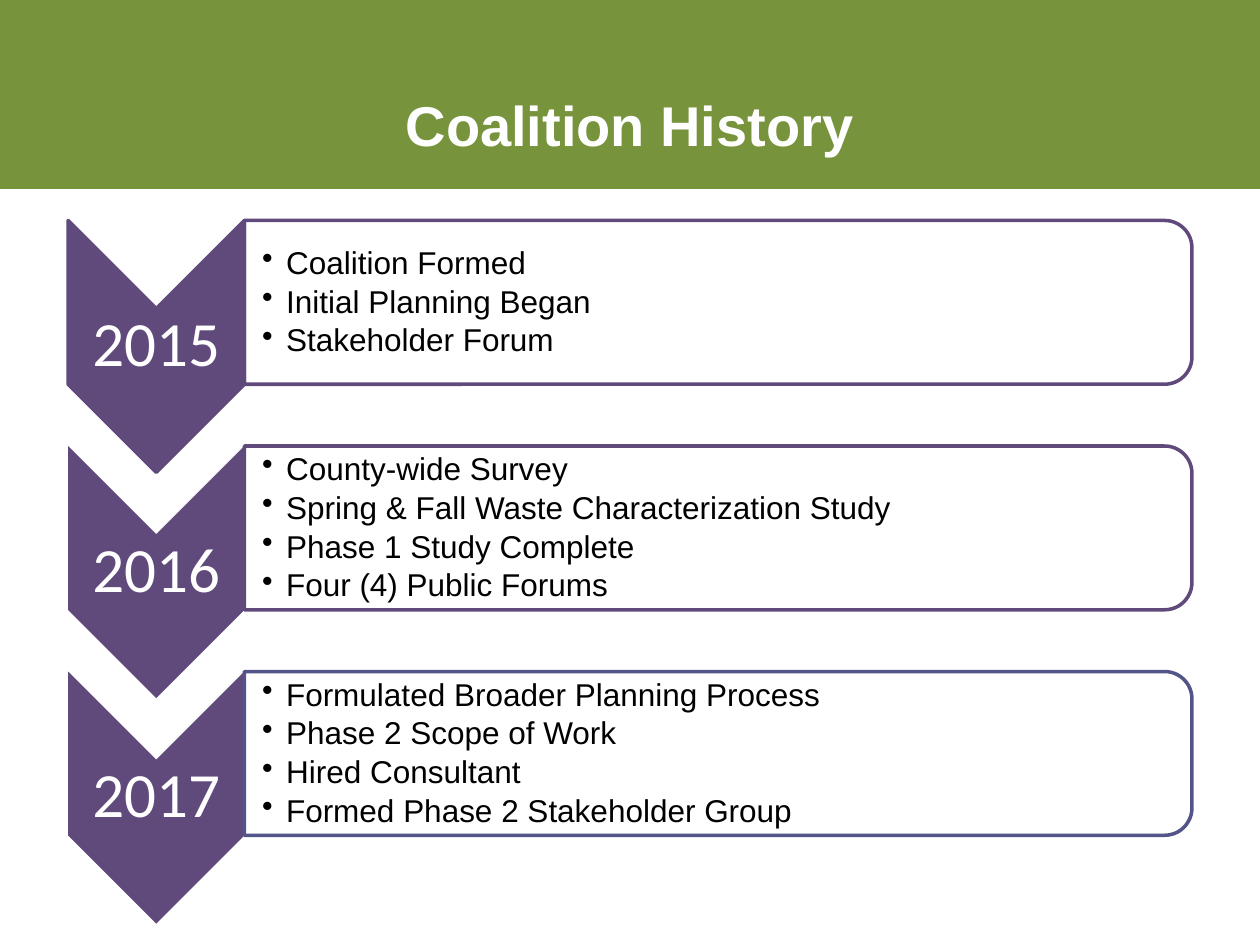
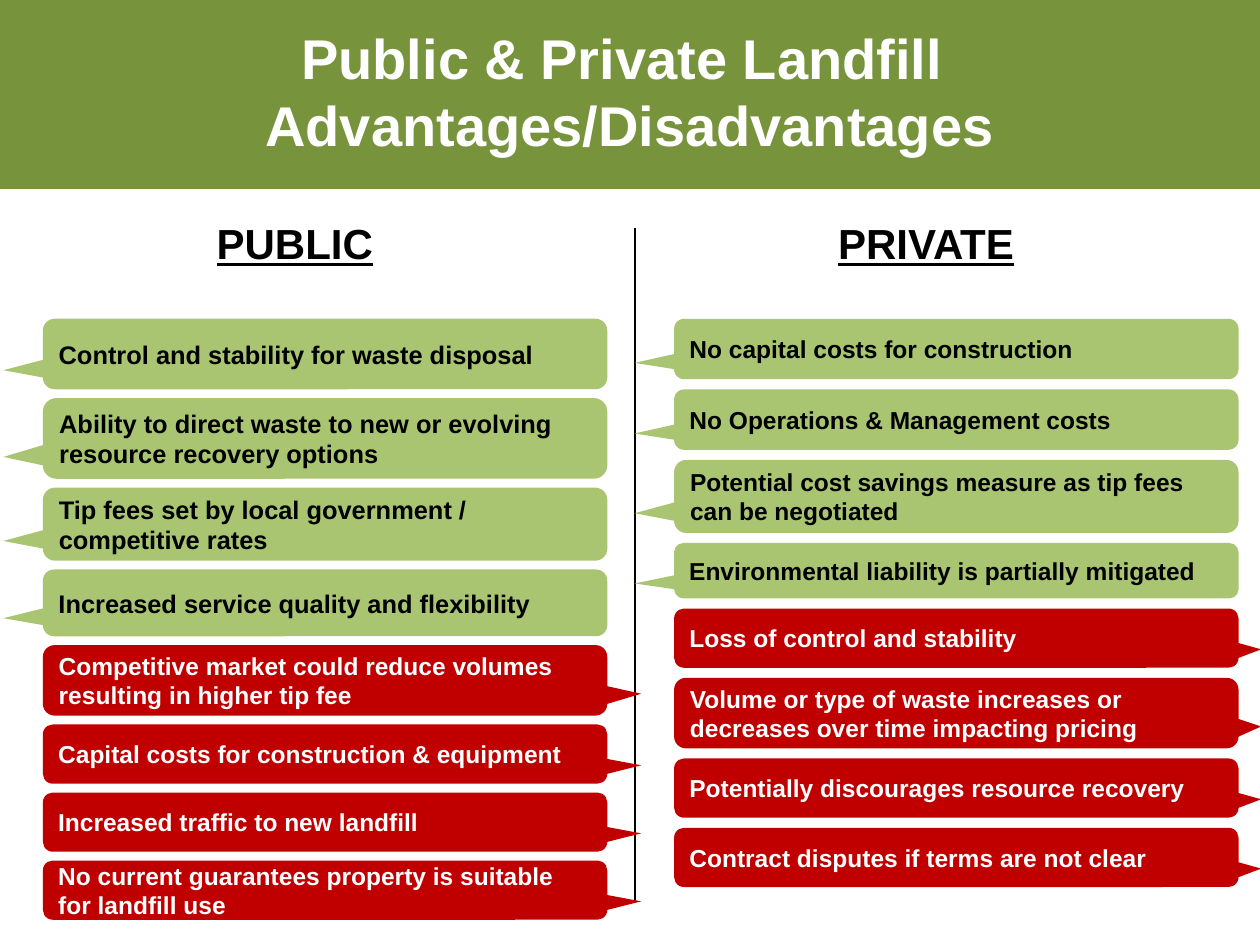
"""Build two slides: the coalition's history and the landfill comparison."""
from dataclasses import dataclass

from pptx import Presentation
from pptx.dml.color import RGBColor
from pptx.enum.shapes import MSO_CONNECTOR, MSO_SHAPE as Shape
from pptx.enum.text import MSO_ANCHOR as Anchor, MSO_AUTO_SIZE as AutoSize, PP_ALIGN as Align
from pptx.oxml.ns import qn
from pptx.util import Inches, Pt


@dataclass(frozen=True)
class Theme:
    """Colours, fonts and type sizes that the slides share."""
    band: str = "77933C"
    era: str = "604A7B"
    era_last: str = "53548A"
    gain: str = "A9C571"
    loss: str = "C00000"
    ink: str = "000000"
    paper: str = "FFFFFF"
    body_font: str = "Arial"
    year_font: str = "Calibri"
    title: float = 32
    year: float = 36
    heading: float = 24
    milestone: float = 18
    point: float = 14
    point_large: float = 14.5


THEME = Theme()
COLUMNS, ROWS = 100, 75
CELL = Inches(0.1)
ERA_PITCH = 17.9

HISTORY = [
    ("2015", THEME.era, ["Coalition Formed", "Initial Planning Began", "Stakeholder Forum"]),
    ("2016", THEME.era, ["County-wide Survey", "Spring & Fall Waste Characterization Study",
                         "Phase 1 Study Complete", "Four (4) Public Forums"]),
    ("2017", THEME.era_last, ["Formulated Broader Planning Process", "Phase 2 Scope of Work",
                              "Hired Consultant", "Formed Phase 2 Stakeholder Group"]),
]

PUBLIC_GAINS = [
    ("Control and stability for waste disposal", 5.6),
    ("Ability to direct waste to new or evolving resource recovery options", 6.4),
    ("Tip fees set by local government / competitive rates", 5.8),
    ("Increased service quality and flexibility", 5.3),
]
PUBLIC_LOSSES = [
    ("Competitive market could reduce volumes resulting in higher tip fee", 5.6),
    ("Capital costs for construction & equipment", 4.7),
    ("Increased traffic to new landfill", 4.7),
    ("No current guarantees property is suitable for landfill use", 4.7),
]
PRIVATE_GAINS = [
    ("No capital costs for construction", 4.8),
    ("No Operations & Management costs", 4.8),
    ("Potential cost savings measure as tip fees can be negotiated", 5.8),
    ("Environmental liability is partially mitigated", 4.4),
]
PRIVATE_LOSSES = [
    ("Loss of control and stability", 4.7),
    ("Volume or type of waste increases or decreases over time impacting pricing", 5.6),
    ("Potentially discourages resource recovery", 4.7),
    ("Contract disputes if terms are not clear", 4.7),
]


def cells(*counts):
    """Turn counts of grid cells into lengths."""
    return [int(count * CELL) for count in counts]


def style(paragraph, size, color, bold=False, font=THEME.body_font):
    """Set the font of a whole paragraph."""
    paragraph.font.name = font
    paragraph.font.size = Pt(size)
    paragraph.font.bold = bold
    paragraph.font.color.rgb = RGBColor.from_string(color)


def set_frame(frame, anchor, margins):
    """Wrap a text frame and set its anchor and its margins in cells."""
    frame.word_wrap = True
    frame.auto_size = AutoSize.NONE
    frame.vertical_anchor = anchor
    (frame.margin_left, frame.margin_top,
     frame.margin_right, frame.margin_bottom) = cells(*margins)


def add_panel(slide, kind, area, fill=None, line=None):
    """Add a preset shape with a flat fill and an optional outline."""
    panel = slide.shapes.add_shape(kind, *cells(*area))
    panel.shadow.inherit = False
    if fill:
        panel.fill.solid()
        panel.fill.fore_color.rgb = RGBColor.from_string(fill)
    else:
        panel.fill.background()
    if line:
        panel.line.color.rgb = RGBColor.from_string(line)
        panel.line.width = Pt(2)
    else:
        panel.line.fill.background()
    return panel


def add_turned_panel(slide, kind, area, **look):
    """Add a shape turned clockwise by 90 degrees that covers the given area."""
    left, top, width, height = area
    shift = (width - height) / 2
    panel = add_panel(slide, kind, (left + shift, top - shift, height, width), **look)
    panel.rotation = 90


def add_text(slide, area, anchor, margins):
    """Add a text box and return its frame."""
    frame = slide.shapes.add_textbox(*cells(*area)).text_frame
    set_frame(frame, anchor, margins)
    return frame


def add_titled_slide(deck, title):
    """Add a title-only slide with the shared title style."""
    slide = deck.slides.add_slide(deck.slide_layouts.get_by_name("Title Only"))
    heading = slide.shapes.title
    heading.left, heading.top, heading.width, heading.height = cells(0, 3, COLUMNS, 9.5)
    set_frame(heading.text_frame, Anchor.BOTTOM, (4, 0, 4, 0))
    heading.text_frame.text = title
    paragraph = heading.text_frame.paragraphs[0]
    paragraph.alignment = Align.CENTER
    style(paragraph, THEME.title, THEME.paper, bold=True)
    return slide


def move_band_to_layout(slide):
    """Put the title band behind every slide of the layout."""
    band = add_panel(slide, Shape.RECTANGLE, (0, 0, COLUMNS, ROWS / 5), fill=THEME.band)
    slide.slide_layout.shapes.element.insert(2, band.element)


def add_bullet(paragraph, indent):
    """Give a paragraph a round bullet with a hanging indent."""
    properties = paragraph._p.get_or_add_pPr()
    properties.set("marL", str(indent))
    properties.set("indent", str(-indent))
    bullet = properties.makeelement(qn("a:buChar"), {"char": "•"})
    properties.append(bullet)


def add_era(slide, top, year, outline, milestones, arrow_line=None):
    """Add a year arrow with its list of milestones."""
    add_turned_panel(slide, Shape.CHEVRON, (5.4, top, 14, 20), fill=THEME.era, line=arrow_line)
    label = add_text(slide, (5.4, top + 7, 14, 6), Anchor.MIDDLE, (0.3,) * 4).paragraphs[0]
    label.text = year
    label.alignment = Align.CENTER
    label.line_spacing = 0.9
    style(label, THEME.year, THEME.paper, font=THEME.year_font)

    add_turned_panel(slide, Shape.ROUND_2_SAME_RECTANGLE, (19.4, top, 75.2, 13), line=outline)
    frame = add_text(slide, (19.4, top + 0.7, 74.5, 11.7), Anchor.MIDDLE, (1.4, 0.1, 0.1, 0.1))
    frame.text = "\n".join(milestones)
    for paragraph in frame.paragraphs:
        paragraph.line_spacing = 0.9
        paragraph.space_after = Pt(2.7)
        add_bullet(paragraph, Inches(0.19))
        style(paragraph, THEME.milestone, THEME.ink)


def add_callouts(slide, left, top, gap, points, pointer, fill, ink, size):
    """Stack callouts with equal gaps and return the top of the next one."""
    for words, height in points:
        callout = add_panel(slide, Shape.ROUNDED_RECTANGULAR_CALLOUT,
                            (left, top, 44.8, height), fill=fill)
        callout.adjustments[0], callout.adjustments[1] = pointer
        set_frame(callout.text_frame, Anchor.MIDDLE, (1, 0.5, 1, 0.5))
        paragraph = callout.text_frame.paragraphs[0]
        paragraph.text = words
        paragraph.alignment = Align.LEFT
        style(paragraph, size, ink, bold=True)
        top += height + gap
    return top


def add_side(slide, left, name, gains, losses, gap, gain_size, loss_pointer):
    """Add one side of the comparison: heading, advantages, disadvantages."""
    heading = add_text(slide, (left, 16.8, 40, 5), Anchor.TOP, (1, 0.5, 1, 0.5)).paragraphs[0]
    heading.text = name
    heading.alignment = Align.CENTER
    style(heading, THEME.heading, THEME.ink, bold=True)
    heading.font.underline = True
    losses_top = add_callouts(slide, left, 25.3, gap, gains, (-0.57, 0.23),
                              THEME.gain, THEME.ink, gain_size)
    add_callouts(slide, left, losses_top, gap, losses, loss_pointer,
                 THEME.loss, THEME.paper, THEME.point)


def add_divider(slide, column, top, bottom):
    """Add a thin upright line between the two sides."""
    divider = slide.shapes.add_connector(MSO_CONNECTOR.STRAIGHT,
                                         *cells(column, top, column, bottom))
    divider.line.color.rgb = RGBColor.from_string(THEME.ink)
    divider.line.width = Pt(0.75)
    properties = divider.element.spPr
    properties.append(properties.makeelement(qn("a:effectLst"), {}))


def build_history(deck):
    """Build the slide with the three years of the coalition."""
    slide = add_titled_slide(deck, "Coalition History")
    move_band_to_layout(slide)
    for row, (year, outline, milestones) in enumerate(HISTORY):
        add_era(slide, 17.5 + row * ERA_PITCH, year, outline, milestones,
                arrow_line=THEME.era if row == 0 else None)


def build_comparison(deck):
    """Build the slide that compares public and private landfills."""
    slide = add_titled_slide(deck, "Public & Private Landfill \vAdvantages/Disadvantages")
    add_divider(slide, 50.4, 18.1, 71.5)
    add_side(slide, 3.4, "PUBLIC", PUBLIC_GAINS, PUBLIC_LOSSES, 0.7,
             THEME.point_large, (0.56, 0.19))
    add_side(slide, 53.5, "PRIVATE", PRIVATE_GAINS, PRIVATE_LOSSES, 0.8,
             THEME.point, (0.54, 0.19))


def main():
    """Build the deck and save it."""
    deck = Presentation()
    deck.slide_width, deck.slide_height = cells(COLUMNS, ROWS)
    build_history(deck)
    build_comparison(deck)
    deck.save("out.pptx")


if __name__ == "__main__":
    main()
